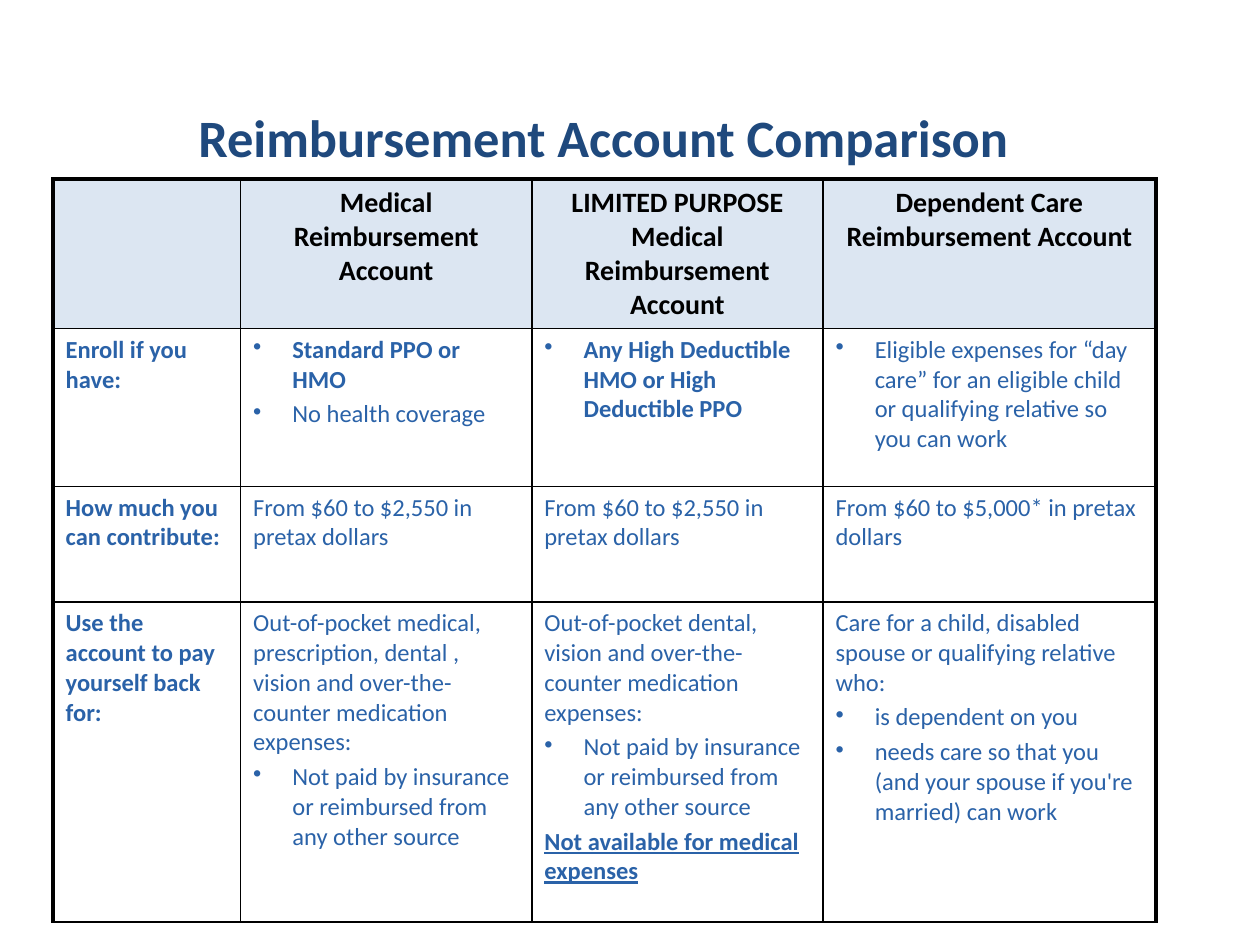
from lxml import etree
from pptx import Presentation
from pptx import util as u
from pptx.dml.color import RGBColor
from pptx.enum import text
from pptx.oxml.ns import qn

TITLE = "Reimbursement Account Comparison"
HEADERS = [
    "",
    "Medical Reimbursement Account",
    "LIMITED PURPOSE Medical Reimbursement Account",
    "Dependent Care Reimbursement Account",
]
CONTRIBUTION = "From $60 to $2,550 in pretax dollars"
UNPAID = ("Not paid by insurance or reimbursed from any other source", "bullet")
ROWS = [
    ("Enroll if you have:", [
        [("Standard PPO or HMO", "bullet bold"), ("No health coverage", "bullet")],
        [("Any High Deductible HMO or High Deductible PPO", "bullet bold")],
        [("Eligible expenses for “day care” for an eligible child or qualifying "
          "relative so you can work", "bullet")],
    ]),
    ("How much you can contribute:", [
        [(CONTRIBUTION, "")],
        [(CONTRIBUTION, "")],
        [("From $60 to $5,000* in pretax dollars", "")],
    ]),
    ("Use the account to pay yourself back for:", [
        [("Out-of-pocket medical, prescription, dental , vision and "
          "over-the-counter medication expenses:", ""), UNPAID],
        [("Out-of-pocket dental, vision and over-the-counter medication expenses:", ""),
         UNPAID, ("Not available for medical expenses", "bold underline")],
        [("Care for a child, disabled spouse or qualifying relative who:", ""),
         ("is dependent on you", "bullet"),
         ("needs care so that you (and your spouse if you're married) can work", "bullet")],
    ]),
]
THEME = {
    "font": "Calibri",
    "title": (30, "1F497D"),
    "header": (16, "000000"),
    "body": (14, "2A62A8"),
    "header_fill": "DCE6F2",
    "border": "000000",
    "outer": 2.25,
    "inner": 1,
}
COLUMN_WIDTHS = [3.78, 5.87, 5.87, 6.71]
ROW_HEIGHTS = [2.98, 3.18, 2.33, 6.45]


def style_font(font, role, bold, underline=None):
    size, color = THEME[role]
    font.name = THEME["font"]
    font.size = u.Pt(size)
    font.bold = bold
    font.underline = underline
    font.color.rgb = RGBColor.from_string(color)


def add_bullet(para):
    props = para._p.get_or_add_pPr()
    props.set("marL", str(u.Cm(0.79)))
    props.set("indent", str(u.Cm(-0.79)))
    etree.SubElement(props, qn("a:buChar"), char="•")


def write_cell(cell, items, role):
    frame = cell.text_frame
    for index, (words, flags) in enumerate(items):
        para = frame.add_paragraph() if index else frame.paragraphs[0]
        para.text = words
        if role == "header":
            para.alignment = text.PP_ALIGN.CENTER
        if index:
            para.space_before = u.Pt(THEME["body"][0] * 0.2)
        if "bullet" in flags:
            add_bullet(para)
        style_font(para.font, role, "bold" in flags, "underline" in flags or None)


def set_borders(cell, widths):
    props = cell._tc.get_or_add_tcPr()
    for side, width in widths.items():
        line = etree.SubElement(props, qn(f"a:ln{side}"), w=str(u.Pt(width)))
        fill = etree.SubElement(line, qn("a:solidFill"))
        etree.SubElement(fill, qn("a:srgbClr"), val=THEME["border"])


def add_title(page):
    box = page.shapes.title
    box.left, box.top, box.width, box.height = map(u.Cm, (0.84, 1.9, 22.66, 1.7))
    frame = box.text_frame
    frame.text = TITLE
    frame.vertical_anchor = text.MSO_ANCHOR.MIDDLE
    para = frame.paragraphs[0]
    para.alignment = text.PP_ALIGN.CENTER
    style_font(para.font, "title", True)


def add_comparison(page):
    contents = [[[(words, "bold")] for words in HEADERS]]
    contents += [[[(label, "bold")], *cells] for label, cells in ROWS]
    table = page.shapes.add_table(
        len(ROW_HEIGHTS), len(COLUMN_WIDTHS), u.Cm(1.07), u.Cm(3.61),
        u.Cm(sum(COLUMN_WIDTHS)), u.Cm(sum(ROW_HEIGHTS))).table
    table.first_row = table.horz_banding = False
    for column, width in zip(table.columns, COLUMN_WIDTHS):
        column.width = u.Cm(width)
    for row, height in zip(table.rows, ROW_HEIGHTS):
        row.height = u.Cm(height)

    outer, inner = THEME["outer"], THEME["inner"]
    last = len(COLUMN_WIDTHS) - 1
    for r, row in enumerate(contents):
        for c, items in enumerate(row):
            cell = table.cell(r, c)
            write_cell(cell, items, "body" if r else "header")
            set_borders(cell, {
                "L": inner if c else outer,
                "R": outer if c == last else inner,
                "T": inner if r else outer,
                "B": inner,
            })
            if r:
                cell.fill.background()
            else:
                cell.fill.solid()
                cell.fill.fore_color.rgb = RGBColor.from_string(THEME["header_fill"])


def main():
    deck = Presentation()
    deck.slide_width, deck.slide_height = u.Cm(25.4), u.Cm(19.05)
    page = deck.slides.add_slide(deck.slide_layouts[5])
    add_title(page)
    add_comparison(page)
    deck.save("out.pptx")


if __name__ == "__main__":
    main()
